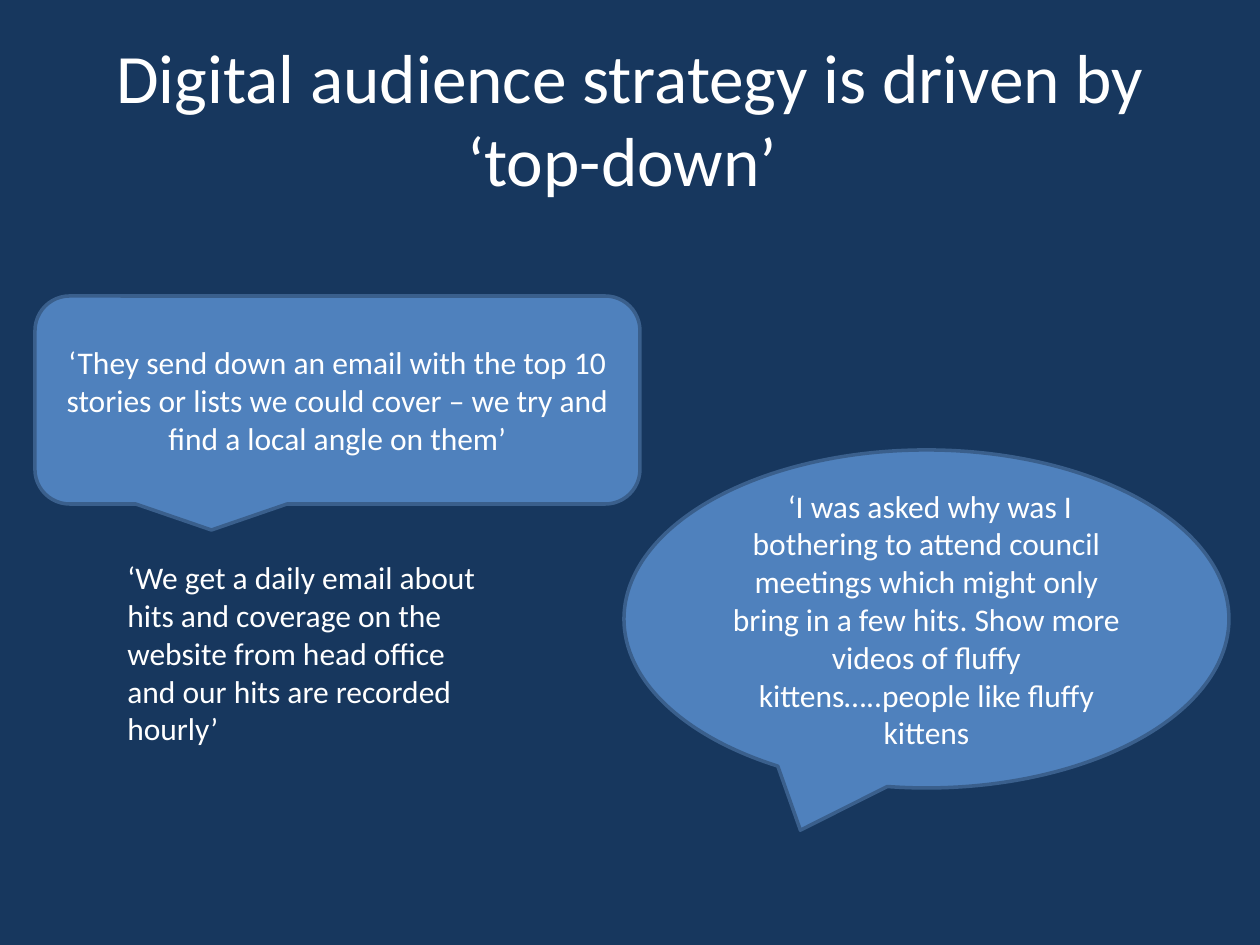
"""Build a slide of quotes about digital audience strategy."""
import pptx
import pptx.util
import pptx.dml.color
import pptx.enum.shapes
import pptx.enum.text

PX = 914400 / 126
SHAPE = pptx.enum.shapes.MSO_SHAPE
ALIGN = pptx.enum.text.PP_ALIGN
ANCHOR = pptx.enum.text.MSO_ANCHOR
FIT = pptx.enum.text.MSO_AUTO_SIZE


def emu(box):
    """Turn pixel lengths into EMU."""
    return [pptx.util.Emu(round(n * PX)) for n in box]


def paint(color, code):
    """Set a fill or font colour from a hex string."""
    color.rgb = pptx.dml.color.RGBColor.from_string(code)


def write(shape, text, size=18, align=ALIGN.CENTER, anchor=ANCHOR.MIDDLE, fit=FIT.NONE):
    """Put formatted white text into a shape."""
    frame = shape.text_frame
    frame.word_wrap = True
    frame.auto_size = fit
    frame.vertical_anchor = anchor
    para = frame.paragraphs[0]
    para.alignment = align
    run = para.add_run()
    run.text = text
    run.font.size = pptx.util.Pt(size)
    run.font.name = "Calibri"
    paint(run.font.color, "FFFFFF")


def head(slide, box, text):
    """Place the slide title."""
    title = slide.shapes.title
    title.left, title.top, title.width, title.height = emu(box)
    write(title, text, size=39.6)


def bubble(slide, kind, box, text):
    """Draw a speech bubble with a quote."""
    shape = slide.shapes.add_shape(kind, *emu(box))
    shape.shadow.inherit = False
    shape.fill.solid()
    paint(shape.fill.fore_color, "4F81BD")
    paint(shape.line.color, "3A5F8C")
    shape.line.width = pptx.util.Pt(2)
    write(shape, text)


def quote(slide, box, text):
    """Place a plain quote without a bubble."""
    shape = slide.shapes.add_textbox(*emu(box))
    write(shape, text, align=ALIGN.LEFT, anchor=ANCHOR.TOP, fit=FIT.SHAPE_TO_FIT_TEXT)


def main():
    """Build and save the deck."""
    deck = pptx.Presentation()
    deck.slide_width, deck.slide_height = emu((1260, 945))
    slide = deck.slides.add_slide(deck.slide_layouts[5])
    back = slide.background.fill
    back.solid()
    paint(back.fore_color, "17375E")
    head(slide, (63, 38, 1134, 158),
         "Digital audience strategy is driven by ‘top-down’ ")
    bubble(slide, SHAPE.ROUNDED_RECTANGULAR_CALLOUT, (35, 296, 605, 208),
           "‘They send down an email with the top 10 stories or lists we could "
           "cover – we try and find a local angle on them’")
    bubble(slide, SHAPE.OVAL_CALLOUT, (624, 450, 605, 338),
           " ‘I was asked why was I bothering to attend council meetings which "
           "might only bring in a few hits. Show more videos of fluffy "
           "kittens…..people like fluffy kittens")
    quote(slide, (115, 552, 379, 204),
          "‘We get a daily email about hits and coverage on the website from "
          "head office and our hits are recorded hourly’")
    deck.save("out.pptx")


if __name__ == "__main__":
    main()
